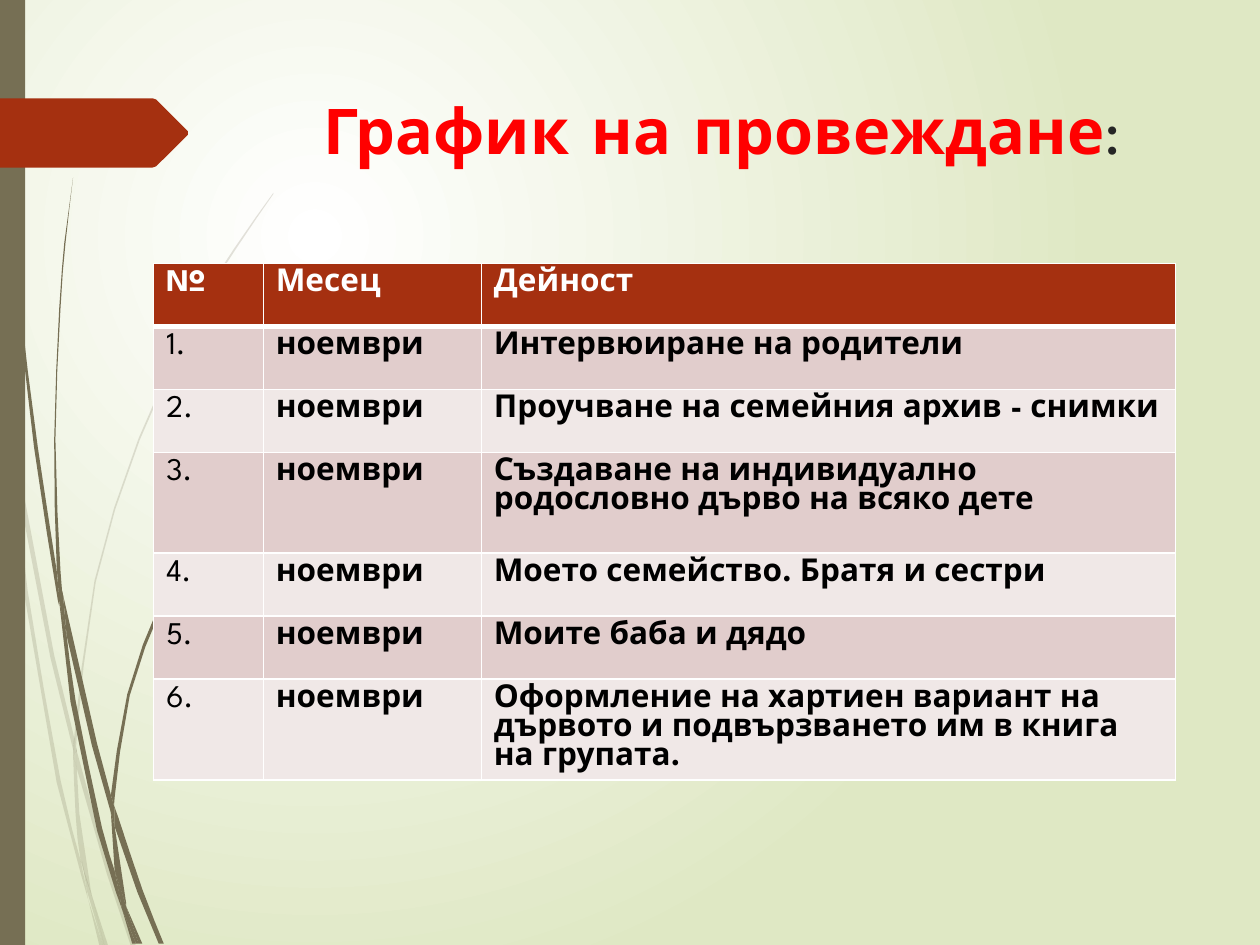
import dataclasses
import itertools
import typing

import lxml.etree
import pptx
import pptx.dml.color
import pptx.enum.shapes
import pptx.enum.text
import pptx.oxml
import pptx.oxml.ns
import pptx.util

Inches = pptx.util.Inches
Point = tuple[float, float]
Edge = list[Point]

OLIVE = "766F54"
RUST = "A53010"
WHITE = "FFFFFF"
BODY_FONT = "League Spartan"
TITLE_FONT = "Comic Neue"


@dataclasses.dataclass
class Blade:
    first_edge: Edge
    second_edge: Edge


@dataclasses.dataclass
class Activity:
    month: str
    description: str
    height: float = 0.5


PALE_GRASS = [
    Blade([(0.08, 3.5), (0.06, 3.22), (0, 2.82)], [(0, 2.99), (0.07, 3.44)]),
    Blade([(0.1, 3.45), (0.43, 5.2), (0.59, 5.86)],
          [(0.59, 5.99), (0.4, 5.22), (0.12, 3.76)]),
    Blade([(0.61, 5.96), (0.64, 6.07), (0.88, 6.92), (1.08, 7.51)],
          [(1.04, 7.51), (0.85, 6.94), (0.61, 6.1)]),
    Blade([(0.73, 7.11), (0.83, 7.51)], [(0.86, 7.51)]),
    Blade([(0.7, 7.14), (0.64, 6.83), (0.48, 6.19), (0.22, 4.69), (0.12, 3.76), (0.08, 3.5)],
          [(0.19, 4.7), (0.45, 6.21), (0.64, 6.93)]),
    Blade([(0.58, 5.99), (0.6, 6.46), (0.64, 6.83), (0.73, 7.11)],
          [(0.72, 7.06), (0.63, 6.46), (0.61, 6.1)]),
    Blade([(0.61, 5.96), (0.61, 5.84), (0.76, 4.62), (1.11, 3.49), (1.59, 2.45),
           (1.87, 1.98), (2.17, 1.54)],
          [(2.17, 1.53), (1.86, 1.97), (1.58, 2.44), (1.1, 3.48), (0.75, 4.61),
           (0.59, 5.84), (0.59, 5.86)]),
    Blade([(0.7, 7.14), (0.79, 7.51)], [(0.82, 7.51)]),
    Blade([(0.61, 6.1), (0.61, 5.96)], [(0.59, 5.86), (0.58, 5.99)]),
    Blade([(0.65, 6.83), (0.69, 7.07), (0.82, 7.51)],
          [(0.83, 7.51), (0.73, 7.11), (0.67, 6.92)]),
]

DARK_GRASS = [
    Blade([(0.03, 0), (0.04, 0.48), (0.06, 1.09), (0.15, 2.32), (0.3, 3.55), (0.45, 4.53),
           (0.47, 4.81)],
          [(0.46, 4.77), (0.27, 3.55), (0.14, 2.33), (0.05, 1.1), (0.03, 0.48), (0.02, 0)]),
    Blade([(0.5, 4.72), (0.77, 5.9), (0.88, 6.31)],
          [(0.88, 6.45), (0.73, 5.92), (0.53, 5.05)]),
    Blade([(0.91, 6.41), (0.94, 6.49), (1.13, 7.06), (1.3, 7.49)],
          [(1.26, 7.49), (1.09, 7.08), (0.91, 6.56)]),
    Blade([(0.97, 7.22), (0.91, 6.91), (0.81, 6.57), (0.6, 5.56), (0.53, 5.05), (0.47, 4.77)],
          [(0.56, 5.57), (0.77, 6.59), (0.92, 7.08)]),
    Blade([(0.5, 4.72), (0.48, 4.53), (0.44, 3.49), (0.48, 2.45), (0.52, 1.93), (0.58, 1.41)],
          [(0.51, 1.93), (0.47, 2.45), (0.43, 3.49), (0.45, 4.49), (0.49, 4.72)]),
    Blade([(1, 7.19), (1.1, 7.49)], [(1.13, 7.49)]),
    Blade([(0.45, 4.49), (0.47, 4.77)], [(0.53, 5.05), (0.5, 4.72)]),
    Blade([(0.91, 6.41), (0.91, 6.33), (1.03, 5.52), (1.31, 4.76), (1.69, 4.06),
           (1.91, 3.74), (2.16, 3.44)],
          [(2.15, 3.44), (1.91, 3.73), (1.68, 4.05), (1.29, 4.74), (1.01, 5.51), (0.88, 6.31)]),
    Blade([(0.97, 7.22), (1.05, 7.49)], [(1.08, 7.49)]),
    Blade([(0.88, 6.45), (0.91, 6.91), (1, 7.19)], [(1, 7.16), (0.91, 6.56)]),
    Blade([(0.88, 6.45), (0.91, 6.56)], [(0.91, 6.41), (0.88, 6.31)]),
    Blade([(0.91, 6.91), (0.97, 7.22), (1.08, 7.49)], [(1.1, 7.49), (1, 7.19), (0.96, 7.06)]),
]

ARROW_TAG = [(0, 0.78), (1.21, 0.78), (1.24, 0.79), (1.49, 1.04), (1.49, 1.07),
             (1.24, 1.32), (1.21, 1.33), (0, 1.33)]

HEADINGS = ["№", "Месец", "Дейност"]
COLUMN_WIDTHS = [0.87, 1.73, 5.51]
ACTIVITIES = [
    Activity("ноември", "Интервюиране на родители"),
    Activity("ноември", "Проучване на семейния архив - снимки"),
    Activity("ноември", "Създаване на индивидуално родословно дърво на всяко дете", 0.8),
    Activity("ноември", "Моето семейство. Братя и сестри"),
    Activity("ноември", "Моите баба и дядо"),
    Activity("ноември", "Оформление на хартиен вариант на дървото и подвързването им "
                        "в книга на групата.", 0.8),
]


def color(value: str) -> pptx.dml.color.RGBColor:
    return pptx.dml.color.RGBColor.from_string(value)


def add_text(paragraph: typing.Any, text: str, *, size: float, font: str = BODY_FONT,
             fill: str = "000000", bold: bool = False) -> None:
    run = paragraph.add_run()
    run.text = text
    run.font.size = pptx.util.Pt(size)
    run.font.name = font
    run.font.bold = bold
    run.font.color.rgb = color(fill)


def smooth(edge: Edge) -> Edge:
    if len(edge) < 4:
        return edge
    padded = [edge[0], *edge, edge[-1]]
    result = [edge[0]]
    for before, start, end, after in zip(padded, padded[1:], padded[2:], padded[3:]):
        middle = tuple((9 * (b + c) - a - d) / 16
                       for a, b, c, d in zip(before, start, end, after))
        result += [middle, end]
    return result


def paint(shape: typing.Any, fill: str, opacity: int = 100) -> None:
    shape.shadow.inherit = False
    shape.fill.solid()
    shape.fill.fore_color.rgb = color(fill)
    shape.line.fill.background()
    if opacity < 100:
        tint = shape.element.spPr.find(".//" + pptx.oxml.ns.qn("a:srgbClr"))
        lxml.etree.SubElement(tint, pptx.oxml.ns.qn("a:alpha"), val=str(opacity * 1000))


def draw_outline(shapes: typing.Any, points: Edge, fill: str, opacity: int = 100) -> None:
    corners = [(Inches(x), Inches(y)) for x, y in points]
    builder = shapes.build_freeform(*corners[0])
    builder.add_line_segments(corners[1:], close=True)
    paint(builder.convert_to_shape(), fill, opacity)


def draw_grass(slide: typing.Any, blades: list[Blade], opacity: int = 100) -> None:
    group = slide.shapes.add_group_shape()
    for blade in blades:
        points = smooth(blade.first_edge) + smooth(blade.second_edge)
        draw_outline(group.shapes, points, OLIVE, opacity)


def set_background(slide: typing.Any) -> None:
    fill = slide.background.fill
    fill.gradient()
    for stop, position, value in zip(fill.gradient_stops, (0, 1), (WHITE, "DFE8C4")):
        stop.position = position
        stop.color.rgb = color(value)
    linear = slide.element.find(".//" + pptx.oxml.ns.qn("a:lin"))
    linear.getparent().replace(linear, pptx.oxml.parse_xml(
        f'<a:path {pptx.oxml.ns.nsdecls("a")} path="circle">'
        '<a:fillToRect l="50000" t="50000" r="100000" b="100000"/></a:path>'))


def set_borders(cell: typing.Any, widths: dict[str, int]) -> None:
    properties = cell._tc.get_or_add_tcPr()
    for side, width in widths.items():
        properties.append(pptx.oxml.parse_xml(
            f'<a:ln{side} {pptx.oxml.ns.nsdecls("a")} w="{pptx.util.Pt(width)}">'
            f'<a:solidFill><a:srgbClr val="{WHITE}"/></a:solidFill></a:ln{side}>'))


def draw_schedule(slide: typing.Any) -> None:
    rows = [HEADINGS] + [[f"{number}.", activity.month, activity.description]
                         for number, activity in enumerate(ACTIVITIES, 1)]
    heights = [0.5] + [activity.height for activity in ACTIVITIES]
    table = slide.shapes.add_table(
        len(rows), len(HEADINGS), Inches(1.22), Inches(2.09),
        Inches(sum(COLUMN_WIDTHS)), Inches(sum(heights))).table
    for column, width in zip(table.columns, COLUMN_WIDTHS):
        column.width = Inches(width)
    for row, height in zip(table.rows, heights):
        row.height = Inches(height)
    for row, column in itertools.product(range(len(rows)), range(len(HEADINGS))):
        cell = table.cell(row, column)
        header = row == 0
        set_borders(cell, {"L": 1, "R": 1, "T": 3 if row == 1 else 1, "B": 3 if header else 1})
        cell.fill.solid()
        cell.fill.fore_color.rgb = color(RUST if header else ("F0E8E7", "E1CDCC")[row % 2])
        add_text(cell.text_frame.paragraphs[0], rows[row][column], size=18,
                 fill=WHITE if header else "000000", bold=header or column > 0)


def draw_title(slide: typing.Any) -> None:
    title = slide.shapes.title
    title.left, title.top, title.width, title.height = map(Inches, (2.13, 0.68, 7.21, 1.4))
    title.text_frame.word_wrap = True
    title.text_frame.vertical_anchor = pptx.enum.text.MSO_ANCHOR.TOP
    paragraph = title.text_frame.paragraphs[0]
    paragraph.alignment = pptx.enum.text.PP_ALIGN.CENTER
    add_text(paragraph, "График на провеждане", size=36, font=TITLE_FONT, fill="FF0000", bold=True)
    add_text(paragraph, ":", size=36, fill="262626")


def main() -> None:
    presentation = pptx.Presentation()
    presentation.slide_width, presentation.slide_height = Inches(10), Inches(7.5)
    slide = presentation.slides.add_slide(presentation.slide_layouts[5])
    set_background(slide)
    draw_grass(slide, PALE_GRASS, opacity=20)
    draw_grass(slide, DARK_GRASS)
    paint(slide.shapes.add_shape(pptx.enum.shapes.MSO_SHAPE.RECTANGLE, 0, 0,
                                 Inches(0.2), Inches(7.5)), OLIVE)
    draw_outline(slide.shapes, ARROW_TAG, RUST)
    draw_title(slide)
    draw_schedule(slide)
    presentation.save("out.pptx")


if __name__ == "__main__":
    main()
